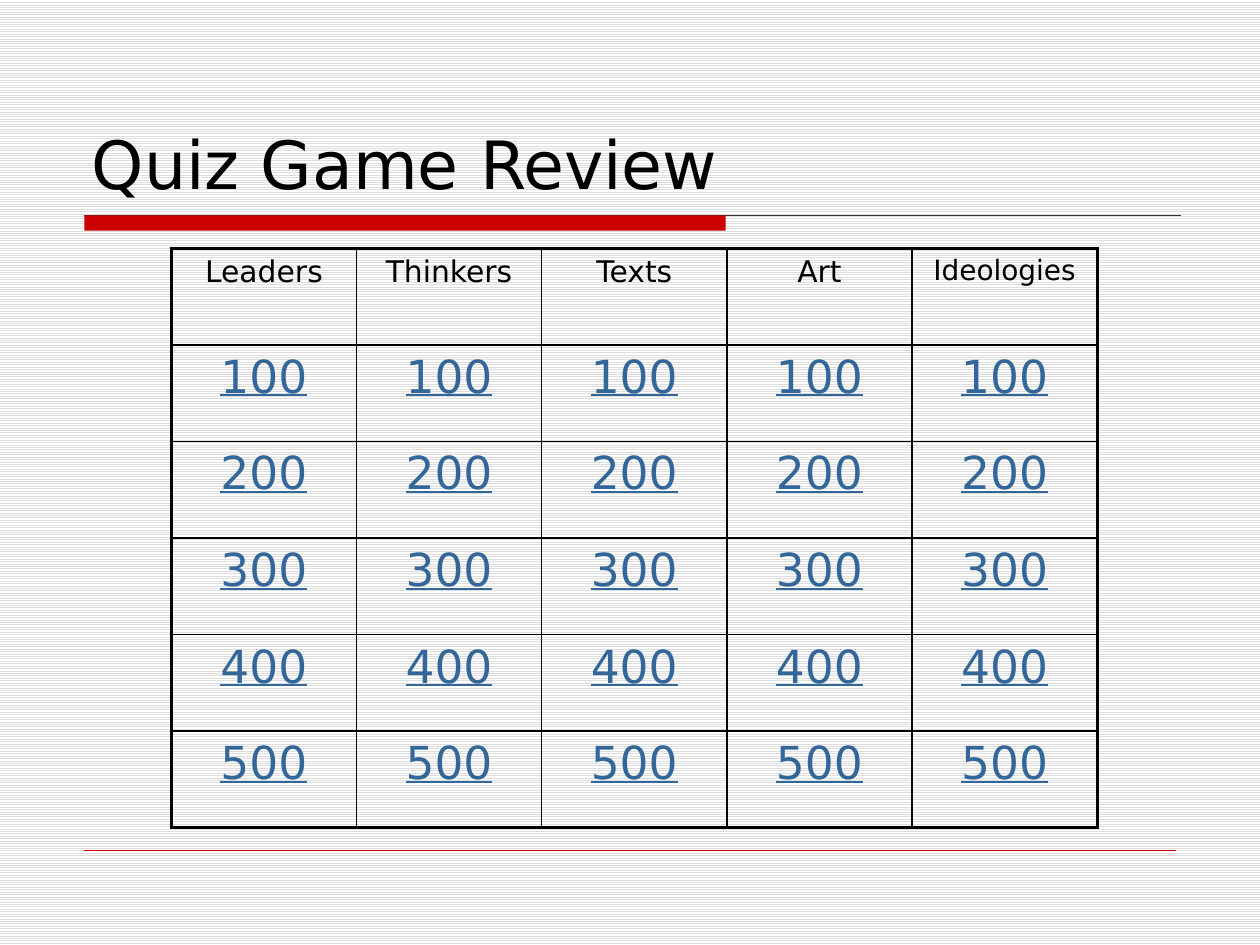
from dataclasses import dataclass

from lxml import etree
from pptx import Presentation
from pptx.dml.color import RGBColor
from pptx.enum.dml import MSO_PATTERN
from pptx.enum.shapes import MSO_CONNECTOR, MSO_SHAPE
from pptx.enum.text import MSO_ANCHOR, MSO_AUTO_SIZE, PP_ALIGN
from pptx.oxml.ns import qn
from pptx.util import Inches, Pt

STRIPES = MSO_PATTERN.LIGHT_HORIZONTAL
STRAIGHT = MSO_CONNECTOR.STRAIGHT
RECTANGLE = MSO_SHAPE.RECTANGLE
BOTTOM = MSO_ANCHOR.BOTTOM
NO_AUTOFIT = MSO_AUTO_SIZE.NONE
LEFT, CENTER = PP_ALIGN.LEFT, PP_ALIGN.CENTER
TITLE_ONLY = 5


@dataclass(frozen=True)
class Theme:
    font: str = "DejaVu Sans"
    ink: str = "000000"
    accent: str = "CC0000"
    rule: str = "333333"
    link: str = "336699"
    paper: str = "FFFFFF"
    stripe: str = "DDDDDD"
    title_size: float = 38
    category_size: float = 17
    long_category_size: float = 16
    points_size: float = 26
    outer_border: float = 2.25
    inner_border: float = 1


THEME = Theme()
CATEGORIES = ["Leaders", "Thinkers", "Texts", "Art", "Ideologies"]
POINTS = [100, 200, 300, 400, 500]
LONG_CATEGORY = 9  # longer names take the smaller type size


def rgb(value):
    return RGBColor.from_string(value)


def write(frame, text, *, size, color=THEME.ink, align=LEFT, underline=False):
    paragraph = frame.paragraphs[0]
    paragraph.alignment = align
    run = paragraph.add_run()
    run.text = text
    run.font.name = THEME.font
    run.font.size = Pt(size)
    run.font.color.rgb = rgb(color)
    if underline:
        run.font.underline = True


def paint_background(slide):
    fill = slide.background.fill
    fill.patterned()
    fill.pattern = STRIPES
    fill.fore_color.rgb = rgb(THEME.stripe)
    fill.back_color.rgb = rgb(THEME.paper)


def add_rule(slide, left, top, width, *, color, weight):
    rule = slide.shapes.add_connector(STRAIGHT, left, top, left + width, top)
    rule.line.color.rgb = rgb(color)
    rule.line.width = Pt(weight)
    etree.SubElement(rule._element.spPr, qn("a:effectLst"))


def add_title(slide, left, top, width, height):
    title = slide.shapes.title
    title.left, title.top, title.width, title.height = left, top, width, height
    frame = title.text_frame
    frame.auto_size = NO_AUTOFIT
    frame.word_wrap = True
    frame.vertical_anchor = BOTTOM
    write(frame, "Quiz Game Review", size=THEME.title_size)


def add_title_rule(slide, left, top, width, height):
    """Draw a thin rule with a thick bar under its first part."""
    add_rule(slide, left, top, width, color=THEME.rule, weight=0.75)
    bar = slide.shapes.add_shape(RECTANGLE, left, top, Inches(5.09), height)
    bar.shadow.inherit = False
    bar.fill.solid()
    bar.fill.fore_color.rgb = rgb(THEME.accent)
    bar.line.fill.background()


def set_border(cell, side, weight):
    line = etree.SubElement(cell._tc.get_or_add_tcPr(), qn(f"a:ln{side}"), w=str(Pt(weight)))
    fill = etree.SubElement(line, qn("a:solidFill"))
    etree.SubElement(fill, qn("a:srgbClr"), val=THEME.ink)


def format_cell(cell, outer_sides):
    for side in "LRTB":
        set_border(cell, side, THEME.outer_border if side in outer_sides else THEME.inner_border)
    cell.fill.background()


def add_board(slide, left, top, width, height):
    row_count, column_count = len(POINTS) + 1, len(CATEGORIES)
    board = slide.shapes.add_table(row_count, column_count, left, top, width, height).table
    board.first_row = board.horz_banding = False
    for row in range(row_count):
        for column, category in enumerate(CATEGORIES):
            cell = board.cell(row, column)
            edges = {"L": column == 0, "R": column == column_count - 1,
                     "T": row == 0, "B": row == row_count - 1}
            format_cell(cell, [side for side, is_outer in edges.items() if is_outer])
            if row == 0:
                is_long = len(category) > LONG_CATEGORY
                size = THEME.long_category_size if is_long else THEME.category_size
                write(cell.text_frame, category, size=size, align=CENTER)
            else:
                write(cell.text_frame, str(POINTS[row - 1]), size=THEME.points_size,
                      color=THEME.link, align=CENTER, underline=True)


def main():
    presentation = Presentation()
    presentation.slide_width, presentation.slide_height = Inches(10), Inches(7.5)
    slide = presentation.slides.add_slide(presentation.slide_layouts[TITLE_ONLY])
    paint_background(slide)
    add_title_rule(slide, Inches(0.67), Inches(1.71), Inches(8.7), Inches(0.12))
    add_rule(slide, Inches(0.67), Inches(6.75), Inches(8.66), color=THEME.accent, weight=0.25)
    add_title(slide, Inches(0.63), Inches(0.33), Inches(8.75), Inches(1.33))
    add_board(slide, Inches(1.36), Inches(1.97), Inches(7.35), Inches(4.6))
    presentation.save("out.pptx")


if __name__ == "__main__":
    main()
